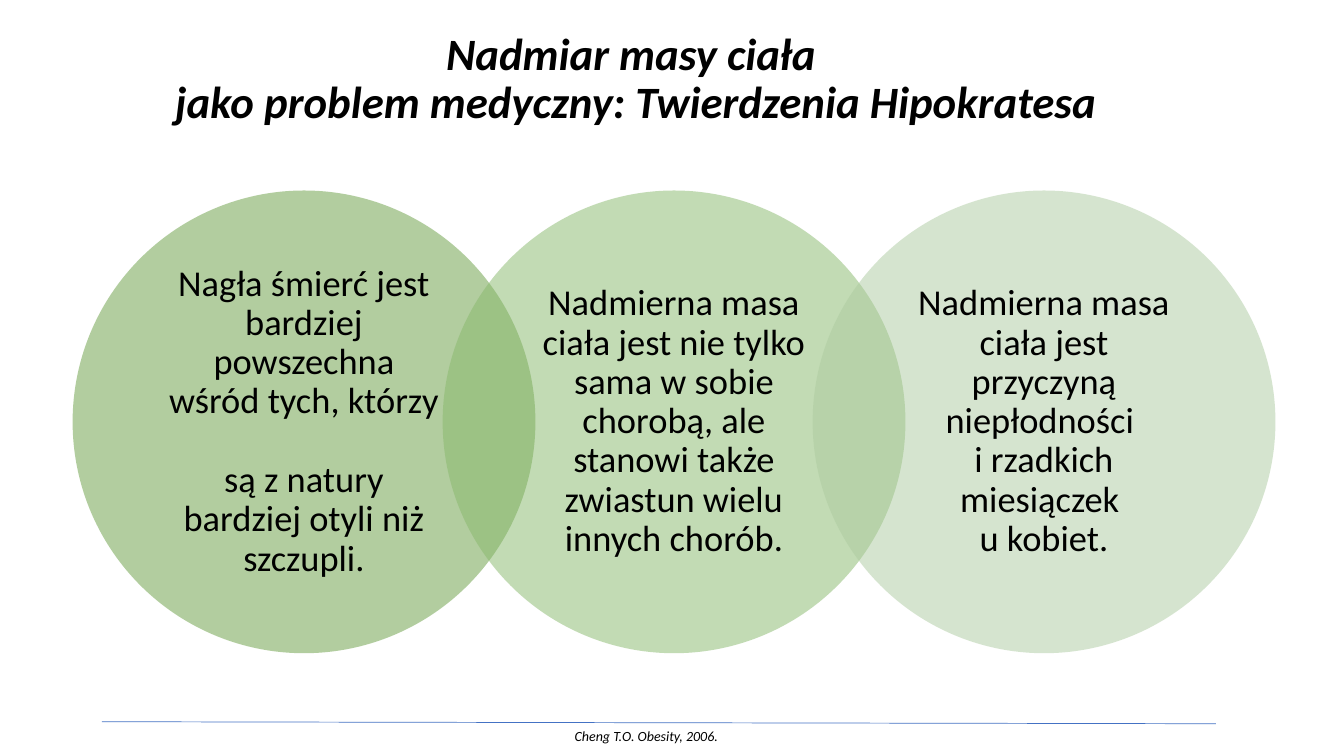
from dataclasses import dataclass

from lxml import etree
from pptx import Presentation
from pptx.dml.color import RGBColor
from pptx.enum.shapes import MSO_CONNECTOR, MSO_SHAPE
from pptx.enum.text import MSO_ANCHOR, MSO_AUTO_SIZE, PP_ALIGN
from pptx.oxml.ns import qn
from pptx.util import Inches, Pt

CENTER = PP_ALIGN.CENTER
MIDDLE = MSO_ANCHOR.MIDDLE
NO_AUTOFIT = MSO_AUTO_SIZE.NONE
ELLIPSE = MSO_SHAPE.OVAL
STRAIGHT = MSO_CONNECTOR.STRAIGHT


@dataclass(frozen=True)
class Theme:
    """Colours, font and type sizes of the slide."""
    font: str = "Calibri"
    text: str = "000000"
    rule: str = "4472C4"
    circles: tuple = ("669D40", "87B86B", "ADCBA0")
    opacity: int = 50
    title_size: int = 32
    claim_size: int = 26
    source_size: int = 10


THEME = Theme()
TITLE = "Nadmiar masy ciała \v jako problem medyczny: Twierdzenia Hipokratesa "
CLAIMS = (
    "Nagła śmierć jest bardziej powszechna wśród tych, którzy \v"
    "są z natury bardziej otyli niż szczupli.",
    "Nadmierna masa ciała jest nie tylko sama w sobie chorobą, "
    "ale stanowi także zwiastun wielu innych chorób.",
    "Nadmierna masa ciała jest przyczyną niepłodności \v"
    "i rzadkich miesiączek \vu kobiet.",
)
SOURCE = "Cheng T.O. Obesity, 2006."


def write_text(frame, text, size, spacing=1.0, bold=False, italic=False):
    """Put one centred, styled paragraph into a text frame."""
    frame.word_wrap = True
    frame.auto_size = NO_AUTOFIT
    paragraph = frame.paragraphs[0]
    paragraph.text = text
    paragraph.alignment = CENTER
    paragraph.line_spacing = spacing
    font = paragraph.font
    font.name, font.size = THEME.font, Pt(size)
    font.bold, font.italic = bold, italic
    font.color.rgb = RGBColor.from_string(THEME.text)


def add_title(slide, left, top, width, height):
    """Place and format the title placeholder."""
    title = slide.shapes.title
    title.left, title.top = Inches(left), Inches(top)
    title.width, title.height = Inches(width), Inches(height)
    title.text_frame.vertical_anchor = MIDDLE
    write_text(title.text_frame, TITLE, THEME.title_size, 0.9, True, True)


def add_claims(slide, left, top, width, diameter):
    """Spread overlapping translucent circles evenly over the given width."""
    step = (width - diameter) / (len(CLAIMS) - 1)
    for index, (claim, color) in enumerate(zip(CLAIMS, THEME.circles)):
        circle = slide.shapes.add_shape(
            ELLIPSE, Inches(left + index * step), Inches(top),
            Inches(diameter), Inches(diameter))
        circle.shadow.inherit = False
        circle.line.fill.background()
        circle.fill.solid()
        circle.fill.fore_color.rgb = RGBColor.from_string(color)
        tint = circle.fill._xPr.find(".//" + qn("a:srgbClr"))
        etree.SubElement(tint, qn("a:alpha"), val=str(THEME.opacity * 1000))
        frame = circle.text_frame
        frame.margin_left = frame.margin_right = Inches(0.26)
        frame.margin_top = frame.margin_bottom = Inches(0.04)
        frame.vertical_anchor = MIDDLE
        write_text(frame, claim, THEME.claim_size, 0.9)


def add_source(slide, left, top, width, height):
    """Draw the slightly sloping rule with the centred citation below it."""
    rule = slide.shapes.add_connector(
        STRAIGHT, Inches(left), Inches(top),
        Inches(left + width), Inches(top + 0.02))
    rule.line.color.rgb = RGBColor.from_string(THEME.rule)
    rule.line.width = Pt(0.5)
    etree.SubElement(rule._element.spPr, qn("a:effectLst"))
    inset = 0.6
    citation = slide.shapes.add_textbox(
        Inches(left + inset), Inches(top + 0.01),
        Inches(9.6), Inches(height))
    write_text(citation.text_frame, SOURCE, THEME.source_size, italic=True)


def main():
    """Build and save the slide."""
    deck = Presentation()
    deck.slide_width, deck.slide_height = Inches(13.33), Inches(7.5)
    slide = deck.slides.add_slide(deck.slide_layouts.get_by_name("Title Only"))
    add_title(slide, 0.56, 0.32, 11.5, 0.95)
    add_claims(slide, 0.72, 1.89, 11.93, 4.59)
    add_source(slide, 1.01, 7.16, 11.05, 0.27)
    deck.save("out.pptx")


if __name__ == "__main__":
    main()
